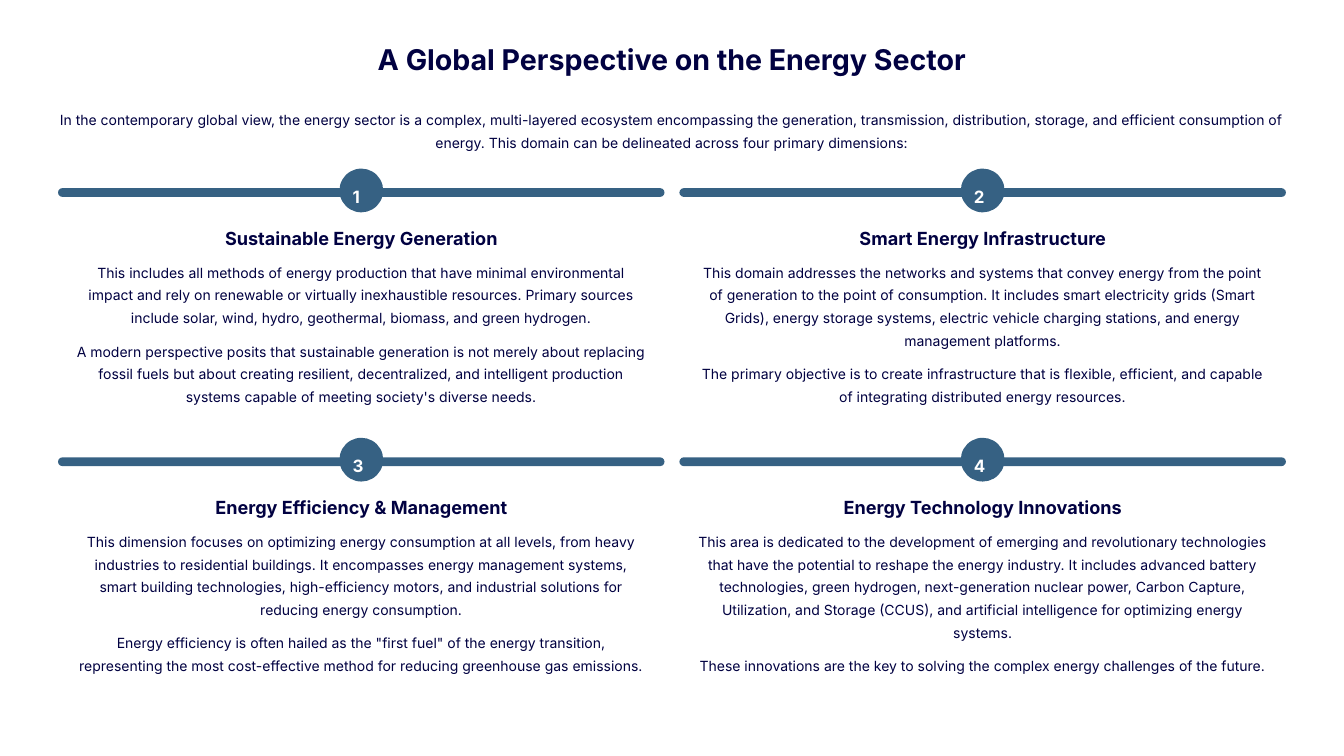
from dataclasses import dataclass

from pptx import Presentation
from pptx.dml.color import RGBColor
from pptx.enum.shapes import MSO_SHAPE
from pptx.enum.text import MSO_ANCHOR, PP_ALIGN
from pptx.util import Pt

ROUNDED = MSO_SHAPE.ROUNDED_RECTANGLE
OVAL = MSO_SHAPE.OVAL
TOP = MSO_ANCHOR.TOP
CENTER = PP_ALIGN.CENTER
LEFT = PP_ALIGN.LEFT


@dataclass(frozen=True)
class Style:
    """Size, line height, colour and weight of one kind of text."""

    size: float
    line: float
    color: RGBColor
    bold: bool = False


class Theme:
    """Colours, font and text styles of the deck."""

    font = "Inter"
    navy = RGBColor(0x01, 0x01, 0x41)
    steel = RGBColor(0x36, 0x61, 0x83)
    white = RGBColor(0xFF, 0xFF, 0xFF)
    title = Style(24.5, 31, navy, True)
    heading = Style(15.5, 19, navy, True)
    number = Style(14.5, 23.5, white, True)
    body = Style(12, 19.5, navy)


SLIDE_WIDTH, SLIDE_HEIGHT = 1152, 648
MARGIN = 49.75
CONTENT_WIDTH = SLIDE_WIDTH - 2 * MARGIN
COLUMN_GAP = 12.75
CARD_WIDTH = (CONTENT_WIDTH - COLUMN_GAP) / 2
CARDS_TOP, ROW_PITCH = 144.5, 230.75
BADGE_SIZE = 37.5
PARA_GAP = 9.2

TITLE = "A Global Perspective on the Energy Sector"
INTRO = (
    "In the contemporary global view, the energy sector is a complex, multi-layered ecosystem "
    "encompassing the generation, transmission, distribution, storage, and efficient consumption "
    "of energy. This domain can be delineated across four primary dimensions:"
)
DIMENSIONS = [
    ("Sustainable Energy Generation", [
        "This includes all methods of energy production that have minimal environmental impact "
        "and rely on renewable or virtually inexhaustible resources. Primary sources include "
        "solar, wind, hydro, geothermal, biomass, and green hydrogen.",
        "A modern perspective posits that sustainable generation is not merely about replacing "
        "fossil fuels but about creating resilient, decentralized, and intelligent production "
        "systems capable of meeting society's diverse needs.",
    ]),
    ("Smart Energy Infrastructure", [
        "This domain addresses the networks and systems that convey energy from the point of "
        "generation to the point of consumption. It includes smart electricity grids (Smart "
        "Grids), energy storage systems, electric vehicle charging stations, and energy "
        "management platforms.",
        "The primary objective is to create infrastructure that is flexible, efficient, and "
        "capable of integrating distributed energy resources.",
    ]),
    ("Energy Efficiency & Management", [
        "This dimension focuses on optimizing energy consumption at all levels, from heavy "
        "industries to residential buildings. It encompasses energy management systems, smart "
        "building technologies, high-efficiency motors, and industrial solutions for reducing "
        "energy consumption.",
        'Energy efficiency is often hailed as the "first fuel" of the energy transition, '
        "representing the most cost-effective method for reducing greenhouse gas emissions.",
    ]),
    ("Energy Technology Innovations", [
        "This area is dedicated to the development of emerging and revolutionary technologies "
        "that have the potential to reshape the energy industry. It includes advanced battery "
        "technologies, green hydrogen, next-generation nuclear power, Carbon Capture, "
        "Utilization, and Storage (CCUS), and artificial intelligence for optimizing energy "
        "systems.",
        "These innovations are the key to solving the complex energy challenges of the future.",
    ]),
]


def write(box, texts, style, align=CENTER):
    """Fill a box with paragraphs in one style."""
    frame = box.text_frame
    frame.word_wrap = True
    frame.vertical_anchor = TOP
    frame.margin_left = frame.margin_top = frame.margin_right = frame.margin_bottom = 0
    for index, text in enumerate(texts):
        para = frame.add_paragraph() if index else frame.paragraphs[0]
        para.text = text
        para.alignment = align
        para.line_spacing = Pt(style.line)
        para.space_before = Pt(PARA_GAP if index else 0)
        para.font.name = Theme.font
        para.font.size = Pt(style.size)
        para.font.bold = style.bold
        para.font.color.rgb = style.color


def add_text(page, left, top, width, height, texts, style, align=CENTER):
    """Add a text box in one style."""
    box = page.shapes.add_textbox(Pt(left), Pt(top), Pt(width), Pt(height))
    write(box, texts, style, align)


def add_steel_shape(page, kind, left, top, width, height):
    """Add a flat steel-blue shape without an outline."""
    shape = page.shapes.add_shape(kind, Pt(left), Pt(top), Pt(width), Pt(height))
    shape.shadow.inherit = False
    shape.fill.solid()
    shape.fill.fore_color.rgb = Theme.steel
    shape.line.fill.background()
    return shape


def add_header(page, left, top, width):
    """Place the title and the introduction."""
    title = page.shapes.title
    title.left, title.top, title.width, title.height = Pt(left), Pt(top), Pt(width), Pt(31)
    write(title, [TITLE], Theme.title)
    add_text(page, left, top + 56.25, width, 39, [INTRO], Theme.body)


def add_dimension(page, left, top, width, number, heading, texts):
    """Place one numbered dimension: bar, badge, heading and body."""
    bar = add_steel_shape(page, ROUNDED, left, top + 16.75, width, 7.5)
    bar.adjustments[0] = 0.5
    badge_left = left + (width - BADGE_SIZE) / 2
    add_steel_shape(page, OVAL, badge_left, top, BADGE_SIZE, BADGE_SIZE)
    add_text(page, badge_left + 11.25, top + 9.5, 15, 18.75, [str(number)], Theme.number, LEFT)
    inset = 14.2
    inner_left, inner_width = left + inset, width - 2 * inset
    add_text(page, inner_left, top + 50, inner_width, 19, [heading], Theme.heading)
    add_text(page, inner_left, top + 76.75, inner_width, 127, texts, Theme.body)


def add_energy_slide(deck):
    """Build the slide with its header and the two-by-two grid."""
    page = deck.slides.add_slide(deck.slide_layouts[5])
    page.background.fill.solid()
    page.background.fill.fore_color.rgb = Theme.white
    add_header(page, MARGIN, 34.5, CONTENT_WIDTH)
    for index, (heading, texts) in enumerate(DIMENSIONS):
        row, column = divmod(index, 2)
        left = MARGIN + column * (CARD_WIDTH + COLUMN_GAP)
        top = CARDS_TOP + row * ROW_PITCH
        add_dimension(page, left, top, CARD_WIDTH, index + 1, heading, texts)


def main():
    """Create and save the deck."""
    deck = Presentation()
    deck.slide_width, deck.slide_height = Pt(SLIDE_WIDTH), Pt(SLIDE_HEIGHT)
    add_energy_slide(deck)
    deck.save("out.pptx")


if __name__ == "__main__":
    main()
